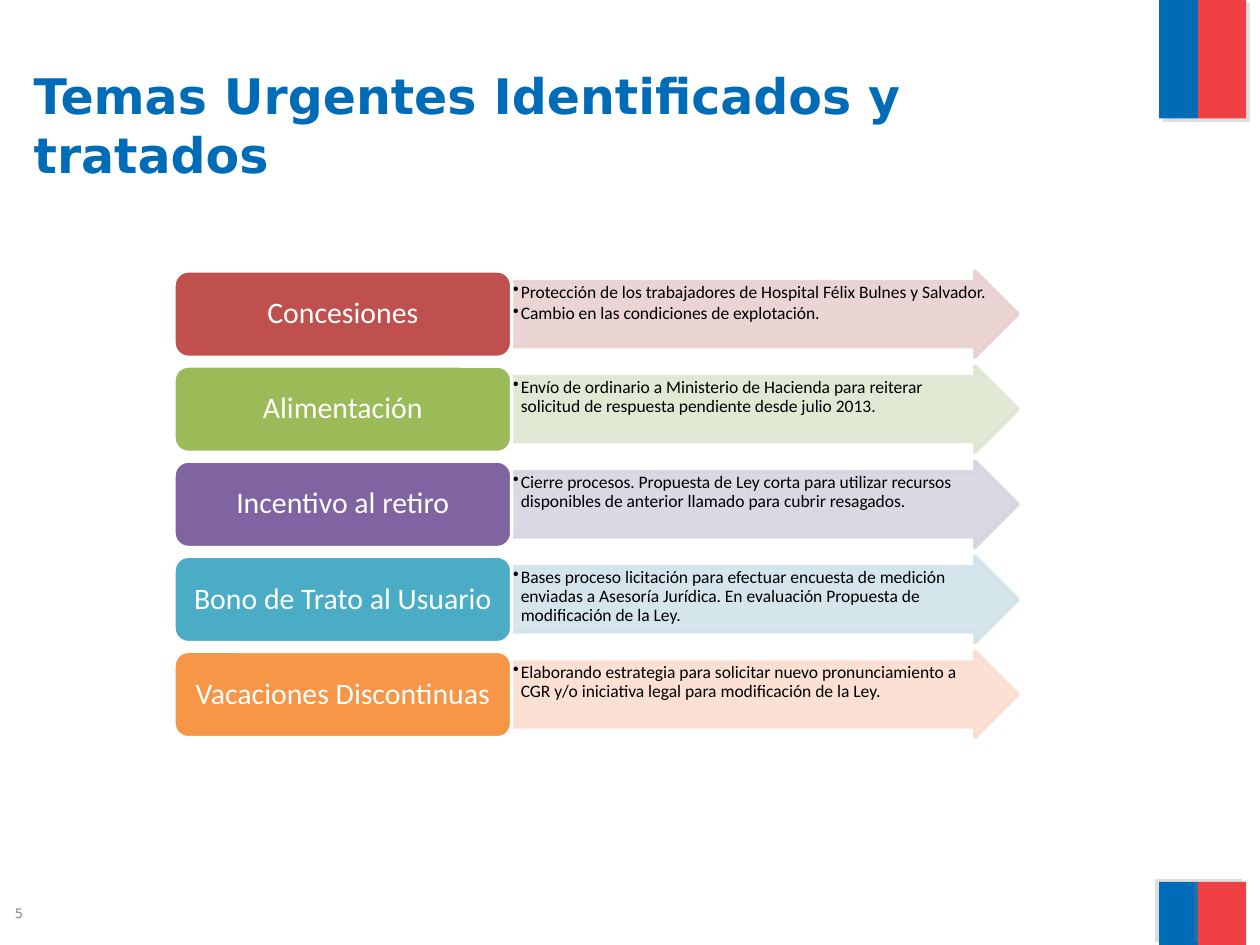
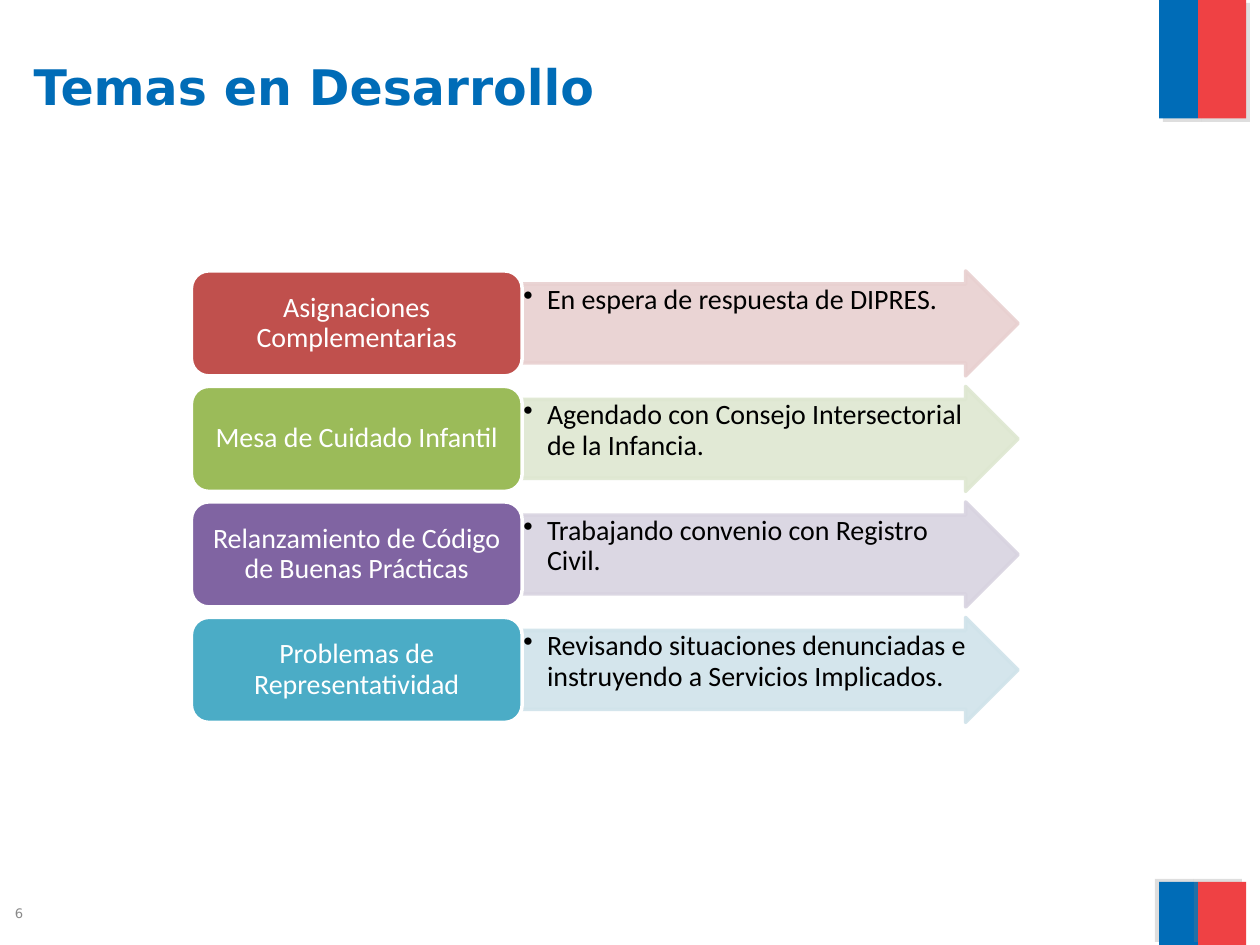
from lxml import etree
from pptx import Presentation
from pptx.dml.color import RGBColor
from pptx.enum.shapes import MSO_SHAPE as Preset
from pptx.enum.text import MSO_ANCHOR as Anchor, PP_ALIGN as Align
from pptx.oxml.ns import qn
from pptx.util import Pt

# Shared style
BLUE, RED, GREY = "006CB7", "EF4144", "898989"
WHITE, BLACK, SHADOW = "FFFFFF", "000000", "808080"
TITLE_FONT, BODY_FONT = "DejaVu Sans", "Calibri"
TITLE_LEFT, TITLE_WIDTH, TITLE_BOTTOM = 12.2, 643, 101.5
ROW_COLOURS = [  # label, arrow
    ("C0504D", "E8D0D0"),
    ("9BBB59", "DEE7D1"),
    ("8064A2", "D8D3E0"),
    ("4BACC6", "D0E3EA"),
    ("F79646", "FCDDCF"),
]
ROWS_TOP, ROWS_RIGHT = 154.8, 581.8
ROW_PITCH = 1.1  # in row heights

# Slide content
URGENT_TOPICS = [
    ("Concesiones", [
        "Protección de los trabajadores de Hospital Félix Bulnes y Salvador.",
        "Cambio en las condiciones de explotación."]),
    ("Alimentación", [
        "Envío de ordinario a Ministerio de Hacienda para reiterar "
        "solicitud de respuesta pendiente desde julio 2013."]),
    ("Incentivo al retiro", [
        "Cierre procesos. Propuesta de Ley corta para utilizar recursos "
        "disponibles de anterior llamado para cubrir resagados."]),
    ("Bono de Trato al Usuario", [
        "Bases proceso licitación para efectuar encuesta de medición "
        "enviadas a Asesoría Jurídica. En evaluación Propuesta de "
        "modificación de la Ley."]),
    ("Vacaciones Discontinuas", [
        "Elaborando estrategia para solicitar nuevo pronunciamiento a "
        "CGR y/o iniciativa legal para modificación de la Ley."]),
]
ONGOING_TOPICS = [
    ("Asignaciones Complementarias", ["En espera de respuesta de DIPRES."]),
    ("Mesa de Cuidado Infantil",
     ["Agendado con Consejo Intersectorial de la Infancia."]),
    ("Relanzamiento de Código de Buenas Prácticas",
     ["Trabajando convenio con Registro Civil."]),
    ("Problemas de Representatividad",
     ["Revisando situaciones denunciadas e instruyendo a Servicios Implicados."]),
]


def colour(hex_string):
    return RGBColor.from_string(hex_string)


def add_preset(slide, preset, box, fill, line=None):
    shape = slide.shapes.add_shape(preset, *map(Pt, box))
    shape.shadow.inherit = False
    shape.fill.solid()
    shape.fill.fore_color.rgb = colour(fill)
    if line:
        shape.line.color.rgb = colour(line)
        shape.line.width = Pt(2)
    else:
        shape.line.fill.background()
    return shape


def set_frame(shape, anchor, insets):
    frame = shape.text_frame
    frame.word_wrap = True
    frame.vertical_anchor = anchor
    (frame.margin_left, frame.margin_top,
     frame.margin_right, frame.margin_bottom) = map(Pt, insets)
    return frame


def add_run(paragraph, text, size, font, hex_string, bold=False):
    run = paragraph.add_run()
    run.text = text
    run.font.size = Pt(size)
    run.font.name = font
    run.font.bold = bold
    run.font.color.rgb = colour(hex_string)


def add_text(slide, box, text, size, hex_string, bold=False, top_inset=3.6):
    text_box = slide.shapes.add_textbox(*map(Pt, box))
    frame = set_frame(text_box, Anchor.TOP, (7.2, top_inset, 7.2, 3.6))
    add_run(frame.paragraphs[0], text, size, TITLE_FONT, hex_string, bold)


def set_opacity(shape, percent):
    for element in shape._element.spPr.iter(qn("a:srgbClr")):
        etree.SubElement(element, qn("a:alpha"), val=str(percent * 1000))


def add_shadow(shape, degrees):
    effects = shape._element.spPr.find(qn("a:effectLst"))
    shadow = etree.SubElement(
        effects, qn("a:outerShdw"), blurRad="0", dist=str(Pt(3)),
        dir=str(degrees * 60000), algn="ctr", rotWithShape="0")
    tint = etree.SubElement(shadow, qn("a:srgbClr"), val=SHADOW)
    etree.SubElement(tint, qn("a:alpha"), val="25000")


def set_bullet(paragraph, indent):
    properties = paragraph._p.get_or_add_pPr()
    properties.set("marL", str(Pt(indent)))
    properties.set("indent", str(-Pt(indent)))
    etree.SubElement(properties, qn("a:buChar"), char="•")


def add_flag_bands(slide):
    for top, height, degrees in ((-0.4, 68, 45), (504, 36, 215)):
        for left, width, fill in ((662.4, 22.3, BLUE), (684.7, 27.4, RED)):
            band = add_preset(slide, Preset.RECTANGLE, (left, top, width, height), fill)
            add_shadow(band, degrees)


def add_label(slide, box, text, size, fill):
    label = add_preset(slide, Preset.ROUNDED_RECTANGLE, box, fill, WHITE)
    frame = set_frame(label, Anchor.MIDDLE, (5, 2.5, 5, 2.5))
    paragraph = frame.paragraphs[0]
    paragraph.alignment = Align.CENTER
    paragraph.line_spacing = 0.9
    add_run(paragraph, text, size, BODY_FONT, WHITE)


def add_detail_arrow(slide, box, details, size, indent, fill):
    arrow = add_preset(slide, Preset.RIGHT_ARROW, box, fill, fill)
    arrow.adjustments[0], arrow.adjustments[1] = 0.75, 0.5
    set_opacity(arrow, 90)
    frame = set_frame(arrow, Anchor.TOP, (0.7, 0.7, 0, 0.7))
    for index, detail in enumerate(details):
        paragraph = frame.add_paragraph() if index else frame.paragraphs[0]
        paragraph.alignment = Align.LEFT
        paragraph.line_spacing = 0.9
        paragraph.space_after = Pt(0.15 * size)
        set_bullet(paragraph, indent)
        add_run(paragraph, detail, size, BODY_FONT, BLACK)


def add_topic_rows(slide, topics, left, label_width, height,
                   label_size, detail_size, indent):
    arrow_left = left + label_width
    for row, ((label, details), (dark, light)) in enumerate(zip(topics, ROW_COLOURS)):
        top = ROWS_TOP + row * ROW_PITCH * height
        add_detail_arrow(slide, (arrow_left, top, ROWS_RIGHT - arrow_left, height),
                         details, detail_size, indent, light)
        add_label(slide, (left, top, label_width, height), label, label_size, dark)


def add_base_slide(presentation, title, title_top, number):
    slide = presentation.slides.add_slide(presentation.slide_layouts[6])
    add_flag_bands(slide)
    add_text(slide, (TITLE_LEFT, title_top, TITLE_WIDTH, TITLE_BOTTOM - title_top),
             title, 28, BLUE, bold=True, top_inset=6)
    add_text(slide, (1.4, 514, 228, 19.4), number, 7.5, GREY)
    return slide


def main():
    presentation = Presentation()
    presentation.slide_width, presentation.slide_height = Pt(720), Pt(540)

    # Urgent topics
    slide = add_base_slide(presentation, "Temas Urgentes Identificados y tratados",
                           31.7, "5")
    add_topic_rows(slide, URGENT_TOPICS, left=99.4, label_width=193, height=49.4,
                   label_size=17, detail_size=10, indent=4.5)

    # Topics in progress
    slide = add_base_slide(presentation, "Temas en Desarrollo", 26, "6")
    add_topic_rows(slide, ONGOING_TOPICS, left=109.4, label_width=189, height=60,
                   label_size=16, detail_size=16, indent=13.5)

    presentation.save("out.pptx")


if __name__ == "__main__":
    main()
